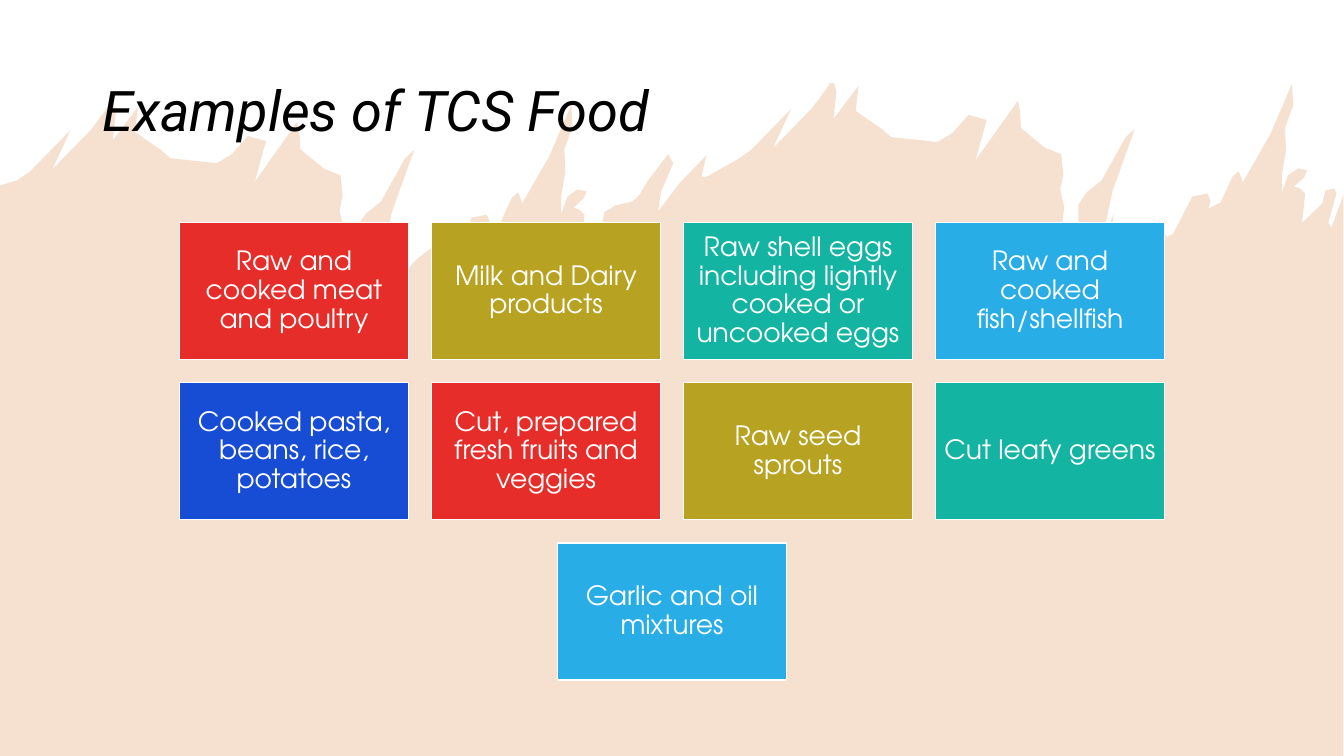
from dataclasses import dataclass

from lxml import etree
from pptx import Presentation
from pptx import util as u
from pptx.dml.color import RGBColor
from pptx.enum import shapes, text
from pptx.oxml.ns import qn


@dataclass(frozen=True)
class Theme:
    title_font: str = "Roboto"
    card_font: str = "TeX Gyre Adventor"
    title_size: int = 40
    card_size: int = 19
    title_color: str = "000000"
    white: str = "FFFFFF"
    splash: str = "D56A17"
    splash_opacity: int = 20
    cards: tuple = ("E72D29", "B8A221", "14B4A3", "29ADE7", "174CD5")


THEME = Theme()
SLIDE_WIDTH, SLIDE_HEIGHT = 33.87, 19.05
CARD_WIDTH, CARD_HEIGHT = 5.77, 3.46
COLUMN_STEP, ROW_STEP = 6.35, 4.04
CARDS_TOP = 5.6

FOOD_ROWS = [
    ["Raw and cooked meat and poultry", "Milk and Dairy products",
     "Raw shell eggs including lightly cooked or uncooked eggs",
     "Raw and cooked fish/shellfish"],
    ["Cooked pasta, beans, rice, potatoes",
     "Cut, prepared fresh fruits and veggies",
     "Raw seed sprouts", "Cut leafy greens"],
    ["Garlic and oil mixtures"],
]

SPLASH_UNIT = u.Cm(2.54) / 100
SPLASH_WIDTH, SPLASH_BOTTOM = 1333, 750
CREST_SHIFT = (-715, 21)
CREST = [
    (732, 158), (745, 149), (785, 108), (767, 147), (806, 107), (820, 88),
    (824, 82), (828, 83), (830, 91), (827, 118), (852, 85), (849, 110),
    (859, 117), (875, 128), (884, 136), (913, 139), (930, 141), (945, 132),
    (961, 114), (979, 119), (968, 159), (1010, 100), (1012, 110), (1013, 127),
    (1036, 146), (1038, 147), (1053, 153), (1055, 173), (1052, 188),
    (1056, 206), (1054, 221), (1057, 234), (1070, 221), (1070, 203),
    (1078, 191), (1093, 179), (1117, 136), (1126, 128), (1104, 189),
    (1091, 250), (1105, 212), (1102, 238), (1112, 252), (1115, 252),
    (1124, 241), (1130, 235), (1151, 219), (1154, 230), (1158, 235),
    (1164, 232), (1183, 195), (1198, 192), (1201, 199), (1199, 207),
    (1211, 201), (1223, 175), (1229, 170), (1232, 177), (1233, 181),
    (1260, 134), (1282, 83), (1283, 105), (1275, 127), (1276, 150),
    (1272, 172), (1272, 191), (1278, 174), (1288, 167), (1297, 169),
    (1294, 176), (1284, 185), (1290, 187), (1295, 192), (1292, 221),
    (1312, 202), (1315, 189),
]
BRIDGE = [
    (606, 207), (610, 204), (627, 200), (634, 194), (643, 179), (663, 153),
    (668, 162), (656, 190), (653, 210), (674, 182), (701, 154), (696, 175),
    (700, 176),
]
RIGHT_EDGE = [
    (1324, 187), (1326, 192), (1318, 221), (1321, 226), (1333, 193),
    (SPLASH_WIDTH, SPLASH_BOTTOM),
]


def set_fill(shape, color):
    shape.fill.solid()
    shape.fill.fore_color.rgb = RGBColor.from_string(color)


def style_paragraph(paragraph, font_name, size, color, italic=False):
    paragraph.line_spacing = 0.9
    font = paragraph.font
    font.name = font_name
    font.size = u.Pt(size)
    font.italic = italic
    font.color.rgb = RGBColor.from_string(color)


def add_splash(slide):
    shift_x, shift_y = CREST_SHIFT
    left_crest = [(x + shift_x, y + shift_y) for x, y in CREST]
    outline = [(0, 184), *left_crest, *BRIDGE, *CREST, *RIGHT_EDGE]
    builder = slide.shapes.build_freeform(0, SPLASH_BOTTOM, scale=SPLASH_UNIT)
    builder.add_line_segments(outline, close=True)
    splash = builder.convert_to_shape()
    splash.shadow.inherit = False
    splash.line.fill.background()
    set_fill(splash, THEME.splash)
    color = splash.fill._xPr.find(qn("a:solidFill"))[0]
    etree.SubElement(color, qn("a:alpha"), val=str(THEME.splash_opacity * 1000))


def add_title(slide, wording):
    box = slide.shapes.add_textbox(u.Cm(2.34), u.Cm(1.02), u.Cm(29.21), u.Cm(3.68))
    frame = box.text_frame
    frame.word_wrap = True
    frame.vertical_anchor = text.MSO_ANCHOR.MIDDLE
    frame.text = wording
    style_paragraph(frame.paragraphs[0], THEME.title_font, THEME.title_size,
                    THEME.title_color, italic=True)


def add_card(slide, left, top, wording, color):
    card = slide.shapes.add_shape(
        shapes.MSO_SHAPE.RECTANGLE,
        u.Cm(left), u.Cm(top), u.Cm(CARD_WIDTH), u.Cm(CARD_HEIGHT))
    card.shadow.inherit = False
    set_fill(card, color)
    card.line.color.rgb = RGBColor.from_string(THEME.white)
    card.line.width = u.Pt(1)
    frame = card.text_frame
    frame.word_wrap = True
    frame.vertical_anchor = text.MSO_ANCHOR.MIDDLE
    frame.margin_left = frame.margin_right = u.Cm(0.2)
    frame.margin_top = frame.margin_bottom = u.Cm(0.2)
    frame.text = wording
    paragraph = frame.paragraphs[0]
    paragraph.alignment = text.PP_ALIGN.CENTER
    style_paragraph(paragraph, THEME.card_font, THEME.card_size, THEME.white)


def add_card_grid(slide):
    card_number = 0
    for row, foods in enumerate(FOOD_ROWS):
        row_width = (len(foods) - 1) * COLUMN_STEP + CARD_WIDTH
        row_left = (SLIDE_WIDTH - row_width) / 2
        for column, food in enumerate(foods):
            color = THEME.cards[card_number % len(THEME.cards)]
            add_card(slide, row_left + column * COLUMN_STEP,
                     CARDS_TOP + row * ROW_STEP, food, color)
            card_number += 1


def main():
    presentation = Presentation()
    presentation.slide_width = u.Cm(SLIDE_WIDTH)
    presentation.slide_height = u.Cm(SLIDE_HEIGHT)
    slide = presentation.slides.add_slide(presentation.slide_layouts[6])
    add_splash(slide)
    add_title(slide, "Examples of TCS Food")
    add_card_grid(slide)
    presentation.save("out.pptx")


if __name__ == "__main__":
    main()
